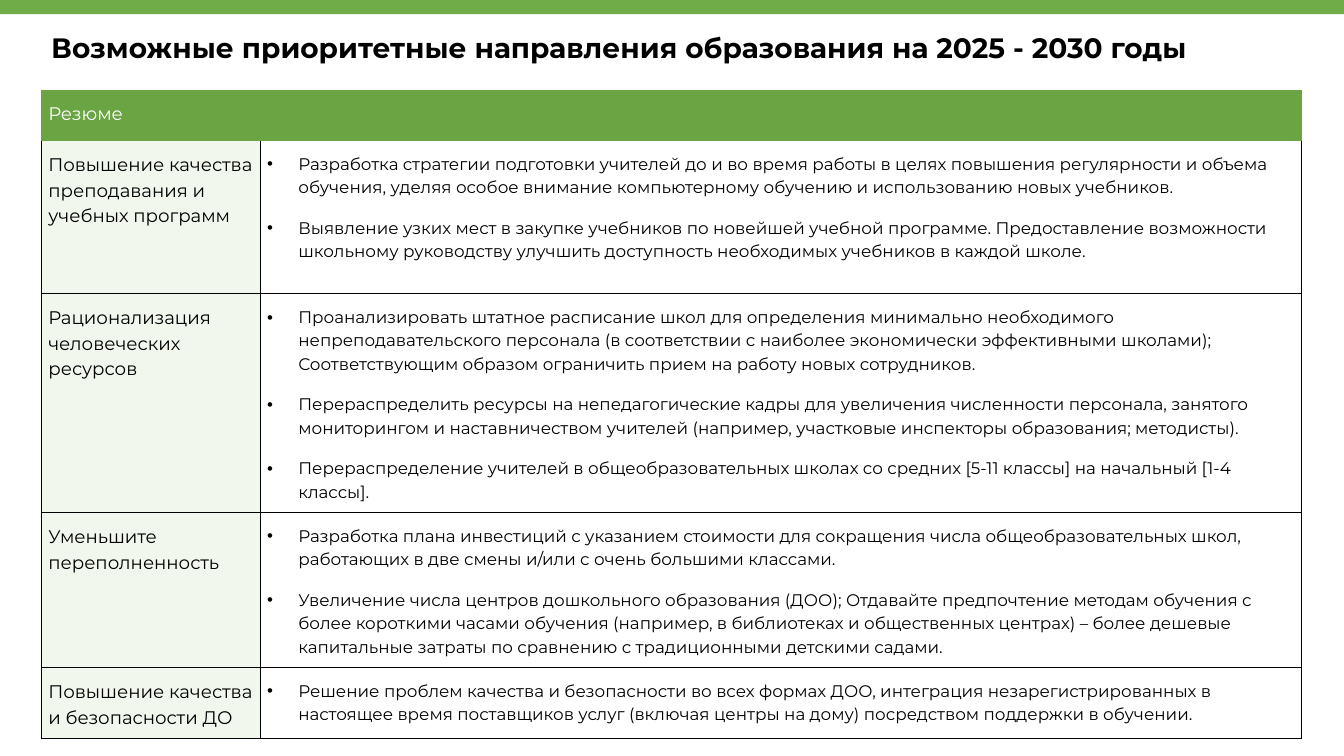
from dataclasses import dataclass

from lxml.etree import SubElement
from pptx import Presentation
from pptx.dml.color import RGBColor
from pptx.enum.shapes import MSO_SHAPE
from pptx.enum.text import MSO_AUTO_SIZE
from pptx.oxml.ns import qn
from pptx.table import _Cell as Cell
from pptx.text.text import TextFrame
from pptx.util import Inches, Pt

BLACK = RGBColor(0x00, 0x00, 0x00)
WHITE = RGBColor(0xFF, 0xFF, 0xFF)
BAND = RGBColor(0x70, 0xAD, 0x47)
HEAD = RGBColor(0x6A, 0xA4, 0x43)
PALE = RGBColor(0xF1, 0xF7, 0xED)
FONT = "Montserrat"
SIDES = "LRTB"


@dataclass
class Goal:
    name: str
    height: float
    steps: list[str]


TITLE = "Возможные приоритетные направления образования на 2025 - 2030 годы"
GOALS = [
    Goal("Повышение качества преподавания и учебных программ", 1.52, [
        "Разработка стратегии подготовки учителей до и во время работы в целях "
        "повышения регулярности и объема обучения, уделяя особое внимание "
        "компьютерному обучению и использованию новых учебников.",
        "Выявление узких мест в закупке учебников по новейшей учебной программе. "
        "Предоставление возможности школьному руководству улучшить доступность "
        "необходимых учебников в каждой школе.",
    ]),
    Goal("Рационализация человеческих ресурсов", 1.54, [
        "Проанализировать штатное расписание школ для определения минимально "
        "необходимого непреподавательского персонала (в соответствии с наиболее "
        "экономически эффективными школами); Соответствующим образом ограничить "
        "прием на работу новых сотрудников.",
        "Перераспределить ресурсы на непедагогические кадры для увеличения "
        "численности персонала, занятого мониторингом и наставничеством учителей "
        "(например, участковые инспекторы образования; методисты).",
        "Перераспределение учителей в общеобразовательных школах со средних "
        "[5-11 классы] на начальный [1-4 классы].",
    ]),
    Goal("Уменьшите переполненность", 0.94, [
        "Разработка плана инвестиций с указанием стоимости для сокращения числа "
        "общеобразовательных школ, работающих в две смены и/или с очень большими "
        "классами.",
        "Увеличение числа центров дошкольного образования (ДОО); Отдавайте "
        "предпочтение методам обучения с более короткими часами обучения "
        "(например, в библиотеках и общественных центрах) – более дешевые "
        "капитальные затраты по сравнению с традиционными детскими садами.",
    ]),
    Goal("Повышение качества и безопасности ДО", 0.49, [
        "Решение проблем качества и безопасности во всех формах ДОО, интеграция "
        "незарегистрированных в настоящее время поставщиков услуг (включая центры "
        "на дому) посредством поддержки в обучении.",
    ]),
]


def write(frame: TextFrame, *texts: str, size: float = 13, color: RGBColor = BLACK,
          bold: bool = False, dots: bool = False) -> None:
    frame.word_wrap = True
    for i, text in enumerate(texts):
        para = frame.add_paragraph() if i else frame.paragraphs[0]
        para.line_spacing = 1.15
        para.space_before = para.space_after = Pt(6)
        run = para.add_run()
        run.text = text
        font = run.font
        font.name, font.size, font.bold = FONT, Pt(size), bold
        font.color.rgb = color
        if dots:
            props = para._p.get_or_add_pPr()
            props.set("marL", str(Inches(0.31)))
            props.set("indent", str(-Inches(0.31)))
            SubElement(props, qn("a:buFont"), typeface="Arial")
            SubElement(props, qn("a:buChar"), char="•")


def style(cell: Cell, fill: RGBColor | None, sides: str) -> None:
    cell.margin_left = cell.margin_right = Inches(0.07)
    cell.margin_top = cell.margin_bottom = Inches(0.1)
    props = cell._tc.get_or_add_tcPr()
    for side in SIDES:
        line = SubElement(props, qn(f"a:ln{side}"), w=str(Pt(0.75)))
        if side in sides:
            paint = SubElement(line, qn("a:solidFill"))
            SubElement(paint, qn("a:srgbClr"), val=str(BLACK))
        else:
            SubElement(line, qn("a:noFill"))
    if fill is None:
        cell.fill.background()
    else:
        cell.fill.solid()
        cell.fill.fore_color.rgb = fill


def main() -> None:
    deck = Presentation()
    deck.slide_width, deck.slide_height = Inches(13.33), Inches(7.5)
    slide = deck.slides.add_slide(deck.slide_layouts[6])

    band = slide.shapes.add_shape(MSO_SHAPE.RECTANGLE, 0, 0, deck.slide_width, Inches(0.14))
    band.shadow.inherit = False
    band.fill.solid()
    band.fill.fore_color.rgb = BAND
    band.line.fill.background()

    table = slide.shapes.add_table(len(GOALS) + 1, 2, Inches(0.41), Inches(0.89),
                                   Inches(12.5), Inches(6.55)).table
    table.first_row = table.horz_banding = False
    for col, width in zip(table.columns, (2.17, 10.33)):
        col.width = Inches(width)
    table.rows[0].height = Inches(0.47)
    for cell in table.rows[0].cells:
        style(cell, HEAD, "")
    write(table.cell(0, 0).text_frame, "Резюме", color=WHITE)
    for i, goal in enumerate(GOALS, 1):
        table.rows[i].height = Inches(goal.height)
        name, steps = table.rows[i].cells
        sides = "LRB" if i == 1 else SIDES
        style(name, PALE, sides)
        style(steps, None, sides)
        write(name.text_frame, goal.name)
        write(steps.text_frame, *goal.steps, size=12, dots=True)

    title = slide.shapes.add_textbox(Inches(0.41), Inches(0.2), Inches(12.37), Inches(0.66))
    title.text_frame.auto_size = MSO_AUTO_SIZE.SHAPE_TO_FIT_TEXT
    write(title.text_frame, TITLE, size=20, bold=True)

    deck.save("out.pptx")


if __name__ == "__main__":
    main()
